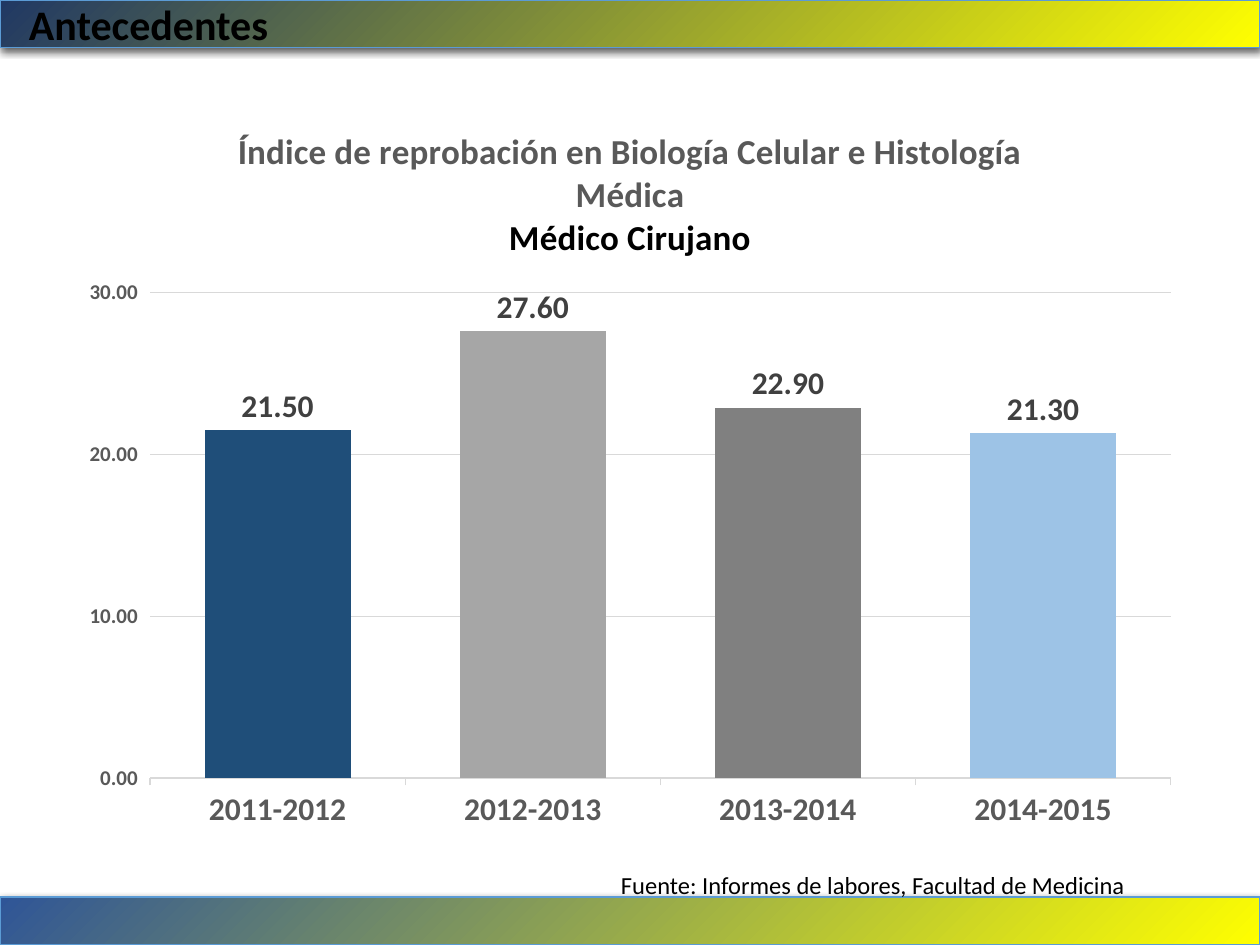
from lxml.etree import SubElement
from pptx import Presentation
from pptx.chart.data import CategoryChartData
from pptx.dml.color import RGBColor
from pptx.enum.chart import XL_CHART_TYPE, XL_LABEL_POSITION, XL_TICK_MARK
from pptx.enum.shapes import MSO_SHAPE
from pptx.enum.text import MSO_ANCHOR, MSO_AUTO_SIZE, PP_ALIGN
from pptx.oxml import parse_xml
from pptx.oxml.ns import nsdecls, qn
from pptx.util import Inches, Pt

FONT = "Calibri"
BLACK = RGBColor(0x00, 0x00, 0x00)
GRAY = RGBColor(0x59, 0x59, 0x59)
DARK_GRAY = RGBColor(0x40, 0x40, 0x40)
RULE = RGBColor(0xD9, 0xD9, 0xD9)
BLUE = RGBColor(0x5B, 0x9B, 0xD5)
YELLOW = RGBColor(0xFF, 0xFF, 0x00)
NAVY = RGBColor(0x20, 0x38, 0x64)
ROYAL = RGBColor(0x2F, 0x55, 0x97)

WIDTH, HEIGHT = Inches(10), Inches(7.5)
BAND_HEIGHT = Inches(0.38)
RATES = {
    "2011-2012": (21.5, RGBColor(0x1F, 0x4E, 0x79)),
    "2012-2013": (27.6, RGBColor(0xA6, 0xA6, 0xA6)),
    "2013-2014": (22.9, RGBColor(0x80, 0x80, 0x80)),
    "2014-2015": (21.3, RGBColor(0x9D, 0xC3, 0xE6)),
}
# Plot area as shares of the chart: left, top, width, height
PLOT = {"x": 0.074, "y": 0.257, "w": 0.906, "h": 0.654}


def style_font(font, size, color=BLACK, bold=False):
    font.name, font.size, font.bold = FONT, Pt(size), bold
    font.color.rgb = color


def write(paragraph, text, align=PP_ALIGN.LEFT, **style):
    paragraph.alignment = align
    run = paragraph.add_run()
    run.text = text
    style_font(run.font, **style)


def add_band(slide, top, dark):
    """Full-width band, yellow at the lower right, with a soft shadow."""
    band = slide.shapes.add_shape(MSO_SHAPE.RECTANGLE, 0, top, WIDTH, BAND_HEIGHT)
    band.line.color.rgb, band.line.width = BLUE, Pt(0.75)
    band.shadow.inherit = False
    properties = band._element.spPr
    gradient = parse_xml(
        f'<a:gradFill {nsdecls("a")} rotWithShape="1"><a:gsLst>'
        f'<a:gs pos="0"><a:srgbClr val="{YELLOW}"/></a:gs>'
        f'<a:gs pos="100000"><a:srgbClr val="{dark}"/></a:gs></a:gsLst>'
        '<a:path path="circle"><a:fillToRect l="100000" t="100000"/></a:path>'
        '</a:gradFill>')
    properties.find(qn("a:prstGeom")).addnext(gradient)
    properties.find(qn("a:effectLst")).append(parse_xml(
        f'<a:outerShdw {nsdecls("a")} blurRad="57150" dist="19050" dir="5400000" '
        'algn="ctr" rotWithShape="0"><a:srgbClr val="000000">'
        '<a:alpha val="63000"/></a:srgbClr></a:outerShdw>'))


def add_heading(slide, left, top, width, height):
    heading = slide.shapes.title
    heading.left, heading.top, heading.width, heading.height = left, top, width, height
    frame = heading.text_frame
    frame.auto_size, frame.vertical_anchor = MSO_AUTO_SIZE.NONE, MSO_ANCHOR.TOP
    write(frame.paragraphs[0], "Antecedentes", size=24, bold=True)
    slide.shapes._spTree.append(heading._element)  # in front of the band


def add_source_note(slide, left, top, width, height):
    frame = slide.shapes.add_textbox(left, top, width, height).text_frame
    frame.word_wrap = False
    write(frame.paragraphs[0], "Fuente: Informes de labores, Facultad de Medicina", size=14)


def fix_plot_area(chart):
    plot_area = chart._chartSpace.chart.plotArea
    for old in plot_area.findall(qn("c:layout")):
        plot_area.remove(old)
    layout = parse_xml(f'<c:layout {nsdecls("c")}/>')
    manual = SubElement(layout, qn("c:manualLayout"))
    settings = {"layoutTarget": "inner", "xMode": "edge", "yMode": "edge", **PLOT}
    for name, value in settings.items():
        SubElement(manual, qn(f"c:{name}")).set("val", str(value))
    plot_area.insert(0, layout)


def style_axes(chart):
    years, rates = chart.category_axis, chart.value_axis
    for axis, size in ((years, 18), (rates, 12)):
        style_font(axis.tick_labels.font, size, GRAY, bold=True)
        axis.major_tick_mark = XL_TICK_MARK.OUTSIDE
    years.has_major_gridlines = False
    rates.minimum_scale, rates.maximum_scale, rates.major_unit = 0, 30, 10
    rates.tick_labels.number_format = "0.00"
    rates.tick_labels.number_format_is_linked = False
    rates.format.line.fill.background()
    for line in (years.format.line, rates.major_gridlines.format.line):
        line.color.rgb, line.width = RULE, Pt(0.75)


def add_rate_chart(slide, left, top, width, height):
    data = CategoryChartData(number_format="0.00")
    data.categories = list(RATES)
    data.add_series("Series 1", [rate for rate, _ in RATES.values()])
    chart = slide.shapes.add_chart(
        XL_CHART_TYPE.COLUMN_CLUSTERED, left, top, width, height, data).chart
    style_font(chart.font, 10)
    chart.has_legend = False

    # Title and subtitle
    title = chart.chart_title.text_frame
    write(title.paragraphs[0],
          "Índice de reprobación en Biología Celular e Histología Médica",
          align=PP_ALIGN.CENTER, size=20, color=GRAY, bold=True)
    write(title.add_paragraph(), "Médico Cirujano",
          align=PP_ALIGN.CENTER, size=20, bold=True)
    chart.chart_title.include_in_layout = False

    fix_plot_area(chart)
    style_axes(chart)

    # Columns and their values
    plot = chart.plots[0]
    plot.gap_width, plot.overlap, plot.vary_by_categories = 75, -25, False
    series = plot.series[0]
    series.format.fill.solid()
    series.format.fill.fore_color.rgb = BLUE
    for index, (_, color) in enumerate(RATES.values()):
        fill = series.points[index].format.fill
        fill.solid()
        fill.fore_color.rgb = color
    labels = series.data_labels
    labels.show_value, labels.position = True, XL_LABEL_POSITION.OUTSIDE_END
    labels.number_format, labels.number_format_is_linked = "0.00", False
    style_font(labels.font, 18, DARK_GRAY, bold=True)


def main():
    deck = Presentation()
    deck.slide_width, deck.slide_height = WIDTH, HEIGHT
    slide = deck.slides.add_slide(deck.slide_layouts[5])
    add_band(slide, 0, NAVY)
    add_band(slide, HEIGHT - BAND_HEIGHT, ROYAL)
    add_heading(slide, Inches(0.13), Inches(-0.06), Inches(3.34), Inches(0.5))
    add_source_note(slide, Inches(4.83), Inches(6.86), Inches(4.28), Inches(0.34))
    add_rate_chart(slide, Inches(0.53), Inches(0.81), Inches(8.94), Inches(5.89))
    deck.save("out.pptx")


if __name__ == "__main__":
    main()
